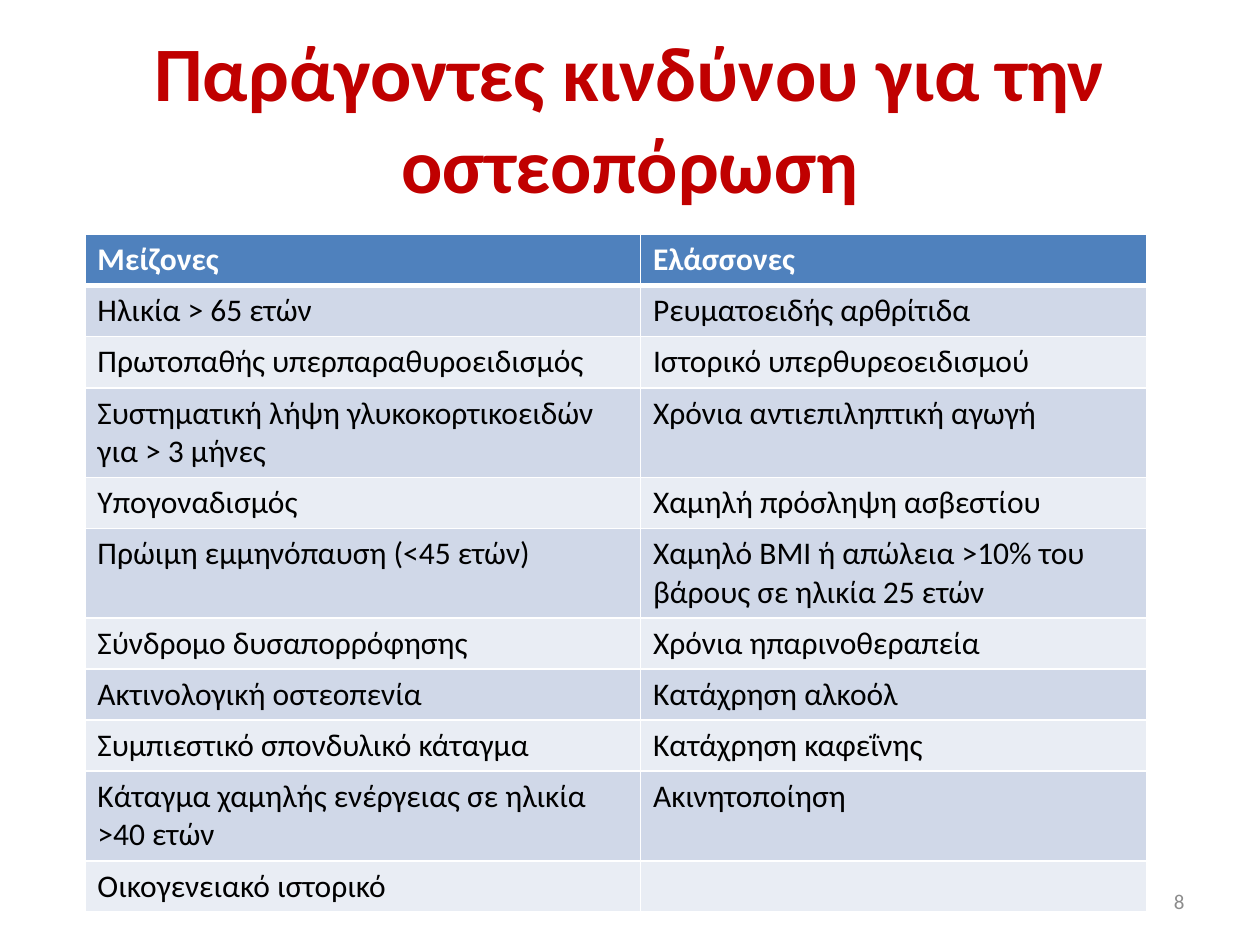
from lxml.etree import SubElement
from pptx import Presentation
from pptx.dml.color import RGBColor
from pptx.enum.text import MSO_ANCHOR, MSO_AUTO_SIZE, PP_ALIGN
from pptx.oxml.ns import qn
from pptx.util import Pt

FONT = "Calibri"
TITLE_RED = RGBColor(0xC0, 0x00, 0x00)
HEADER_BLUE = RGBColor(0x4F, 0x81, 0xBD)
BAND_DARK = RGBColor(0xD0, 0xD8, 0xE8)
BAND_LIGHT = RGBColor(0xE9, 0xED, 0xF4)
WHITE = RGBColor(0xFF, 0xFF, 0xFF)
BLACK = RGBColor(0x00, 0x00, 0x00)
NUMBER_GREY = RGBColor(0x8C, 0x8C, 0x8C)

COLUMN_WIDTHS = (317.5, 289.5)
ROW_HEIGHT = 29.2
RISK_FACTORS = [
    ("Μείζονες", "Ελάσσονες"),
    ("Ηλικία > 65 ετών", "Ρευματοειδής αρθρίτιδα"),
    ("Πρωτοπαθής υπερπαραθυροειδισμός", "Ιστορικό υπερθυρεοειδισμού"),
    ("Συστηματική λήψη γλυκοκορτικοειδών για > 3 μήνες", "Χρόνια αντιεπιληπτική αγωγή"),
    ("Υπογοναδισμός", "Χαμηλή πρόσληψη ασβεστίου"),
    ("Πρώιμη εμμηνόπαυση (<45 ετών)", "Χαμηλό ΒΜΙ ή απώλεια >10% του βάρους σε ηλικία 25 ετών"),
    ("Σύνδρομο δυσαπορρόφησης", "Χρόνια ηπαρινοθεραπεία"),
    ("Ακτινολογική οστεοπενία", "Κατάχρηση αλκοόλ"),
    ("Συμπιεστικό σπονδυλικό κάταγμα", "Κατάχρηση καφεΐνης"),
    ("Κάταγμα χαμηλής ενέργειας σε ηλικία >40 ετών", "Ακινητοποίηση"),
    ("Οικογενειακό ιστορικό", ""),
]


def add_run(paragraph, text, size, color, bold=False):
    """Append one formatted run to a paragraph."""
    run = paragraph.add_run()
    run.text = text
    run.font.name = FONT
    run.font.size = Pt(size)
    run.font.bold = bold
    run.font.color.rgb = color


def add_title(slide, text):
    """Place and fill the title placeholder."""
    title = slide.shapes.title
    title.left, title.top, title.width, title.height = Pt(36), Pt(21.6), Pt(648), Pt(90)
    frame = title.text_frame
    frame.auto_size = MSO_AUTO_SIZE.NONE
    frame.vertical_anchor = MSO_ANCHOR.MIDDLE
    heading = frame.paragraphs[0]
    heading.alignment = PP_ALIGN.CENTER
    add_run(heading, text, 44, TITLE_RED, bold=True)


def set_borders(cell, widths):
    """Draw white borders of the given widths, keyed by side."""
    properties = cell._tc.get_or_add_tcPr()
    for side, width in widths.items():
        border = SubElement(properties, qn(f"a:ln{side}"), w=str(Pt(width)))
        fill = SubElement(border, qn("a:solidFill"))
        SubElement(fill, qn("a:srgbClr"), val=str(WHITE))


def fill_cell(cell, text, row):
    """Format one table cell by its row and write its text."""
    is_header = row == 0
    set_borders(cell, {"L": 1, "R": 1, "T": 3 if row == 1 else 1, "B": 3 if is_header else 1})
    cell.fill.solid()
    band = BAND_DARK if row % 2 else BAND_LIGHT
    cell.fill.fore_color.rgb = HEADER_BLUE if is_header else band
    if text:
        add_run(cell.text_frame.paragraphs[0], text, 18, WHITE if is_header else BLACK, is_header)


def add_risk_table(slide):
    """Add the two-column table of risk factors."""
    table = slide.shapes.add_table(
        len(RISK_FACTORS), len(COLUMN_WIDTHS), Pt(48.5), Pt(134),
        Pt(sum(COLUMN_WIDTHS)), Pt(ROW_HEIGHT * len(RISK_FACTORS)),
    ).table
    for column, width in zip(table.columns, COLUMN_WIDTHS):
        column.width = Pt(width)
    for row, factors in enumerate(RISK_FACTORS):
        table.rows[row].height = Pt(ROW_HEIGHT)
        for column, factor in enumerate(factors):
            fill_cell(table.cell(row, column), factor, row)


def add_page_number(slide, number):
    """Add the page number at the lower right."""
    frame = slide.shapes.add_textbox(Pt(516), Pt(500.5), Pt(168), Pt(28.75)).text_frame
    frame.word_wrap = True
    frame.vertical_anchor = MSO_ANCHOR.MIDDLE
    page = frame.paragraphs[0]
    page.alignment = PP_ALIGN.RIGHT
    add_run(page, number, 12, NUMBER_GREY)


def main():
    """Build and save the slide."""
    presentation = Presentation()
    presentation.slide_width, presentation.slide_height = Pt(720), Pt(540)
    slide = presentation.slides.add_slide(presentation.slide_layouts[5])
    add_title(slide, "Παράγοντες κινδύνου για την οστεοπόρωση")
    add_risk_table(slide)
    add_page_number(slide, "8")
    presentation.save("out.pptx")


if __name__ == "__main__":
    main()
